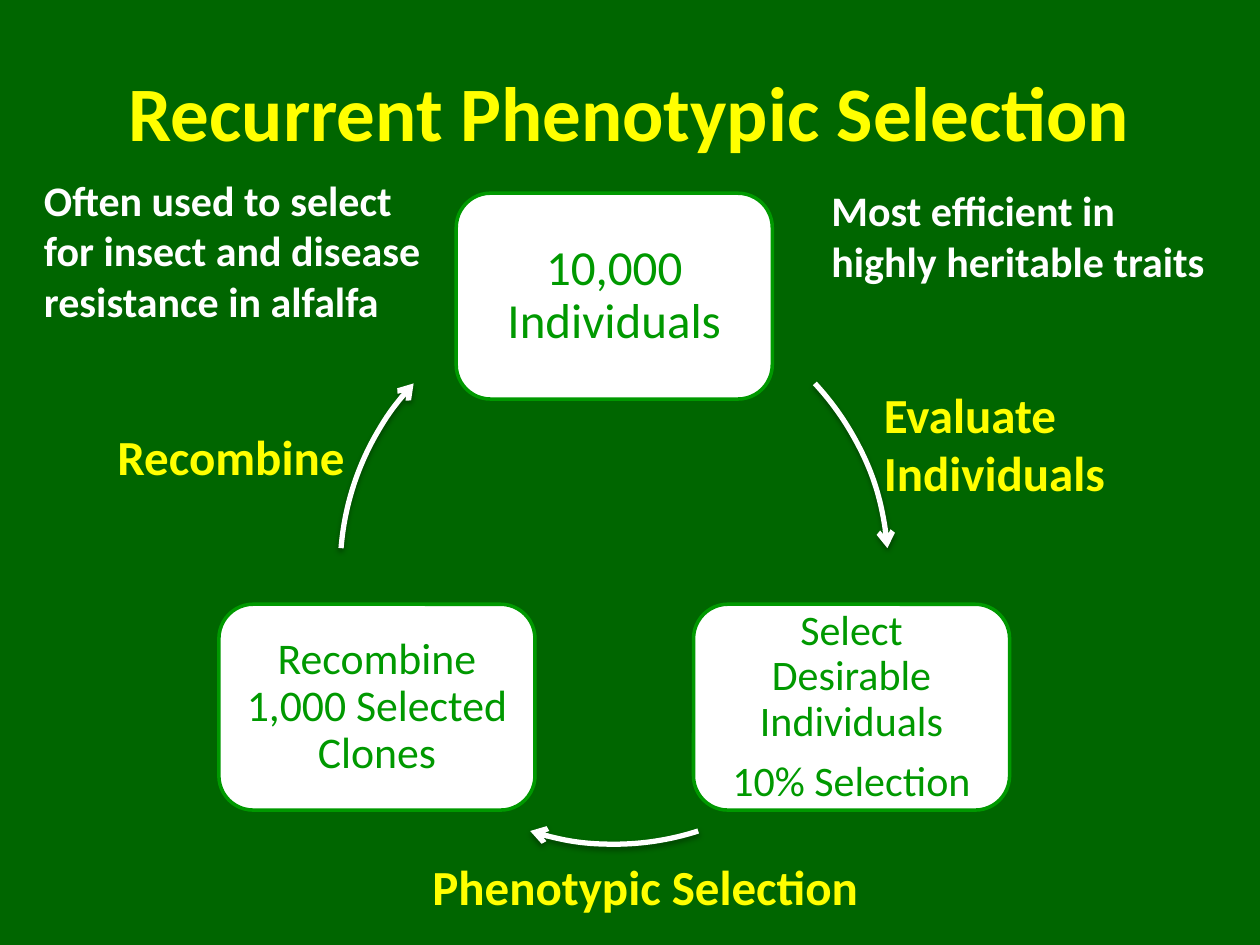
import math
from dataclasses import dataclass

import pptx
import pptx.dml.color
import pptx.enum.shapes
import pptx.enum.text
import pptx.oxml
import pptx.oxml.ns
import pptx.util

COLUMNS, ROWS = 120, 90


@dataclass(frozen=True)
class Theme:
    font: str = "Calibri"
    background: str = "006600"
    accent: str = "FFFF00"
    light: str = "FFFFFF"
    stage: str = "009900"
    title_size: int = 44
    label_size: int = 28
    note_size: int = 24
    border: int = 2
    arrow: int = 3


@dataclass(frozen=True)
class Area:
    column: float
    row: float
    columns: float
    rows: float


@dataclass(frozen=True)
class Cycle:
    column: float = 58.5
    row: float = 54.3
    radius: float = 26.1
    box_columns: float = 30.1
    box_rows: float = 19.6


@dataclass(frozen=True)
class Stage:
    angle: float
    size: int
    paragraphs: tuple[str, ...]
    first_indent: float = 0


@dataclass(frozen=True)
class Label:
    text: str
    area: Area
    size: int
    color: str


THEME = Theme()
CYCLE = Cycle()

STAGES = (
    Stage(-90, 28, ("10,000 Individuals",), -0.33),
    Stage(30, 24, ("Select Desirable Individuals", "10% Selection")),
    Stage(150, 25, ("Recombine 1,000 Selected Clones",)),
)

ARROW_ANGLES = ((317.05, 355.4), (72.15, 107.85), (184.6, 222.95))

LABELS = (
    Label("Recombine", Area(10, 40, 25, 6.9), THEME.label_size, THEME.accent),
    Label("Phenotypic Selection", Area(40, 81, 44, 6.9), THEME.label_size, THEME.accent),
    Label("Evaluate Individuals", Area(83, 36, 31, 12.5), THEME.label_size, THEME.accent),
    Label("Often used to select for insect and disease resistance in alfalfa",
          Area(3, 16, 39, 15.7), THEME.note_size, THEME.light),
    Label("Most efficient in highly heritable traits",
          Area(78, 17, 39, 10.9), THEME.note_size, THEME.light),
)


def rgb(color: str) -> pptx.dml.color.RGBColor:
    return pptx.dml.color.RGBColor.from_string(color)


def place(presentation, area: Area) -> tuple[int, int, int, int]:
    column = presentation.slide_width / COLUMNS
    row = presentation.slide_height / ROWS
    return (round(area.column * column), round(area.row * row),
            round(area.columns * column), round(area.rows * row))


def add_run(paragraph, text: str, size: int, color: str, bold: bool) -> None:
    run = paragraph.add_run()
    run.text = text
    run.font.name = THEME.font
    run.font.size = pptx.util.Pt(size)
    run.font.bold = bold
    run.font.color.rgb = rgb(color)


def set_title(presentation, slide, text: str) -> None:
    title = slide.shapes.title
    title.left, title.top, title.width, title.height = place(presentation, Area(6, 3, 108, 15))
    frame = title.text_frame
    frame.vertical_anchor = pptx.enum.text.MSO_ANCHOR.MIDDLE
    paragraph = frame.paragraphs[0]
    paragraph.alignment = pptx.enum.text.PP_ALIGN.CENTER
    add_run(paragraph, text, THEME.title_size, THEME.accent, True)


def add_stage(presentation, slide, stage: Stage) -> None:
    angle = math.radians(stage.angle)
    area = Area(CYCLE.column + CYCLE.radius * math.cos(angle) - CYCLE.box_columns / 2,
                CYCLE.row + CYCLE.radius * math.sin(angle) - CYCLE.box_rows / 2,
                CYCLE.box_columns, CYCLE.box_rows)
    shape = slide.shapes.add_shape(
        pptx.enum.shapes.MSO_SHAPE.ROUNDED_RECTANGLE, *place(presentation, area))
    shape.shadow.inherit = False
    shape.fill.solid()
    shape.fill.fore_color.rgb = rgb(THEME.light)
    shape.line.color.rgb = rgb(THEME.stage)
    shape.line.width = pptx.util.Pt(THEME.border)
    frame = shape.text_frame
    frame.word_wrap = True
    frame.vertical_anchor = pptx.enum.text.MSO_ANCHOR.MIDDLE
    inset = pptx.util.Inches(0.12)
    frame.margin_left = frame.margin_right = inset
    frame.margin_top = frame.margin_bottom = inset
    for index, text in enumerate(stage.paragraphs):
        paragraph = frame.add_paragraph() if index else frame.paragraphs[0]
        paragraph.alignment = pptx.enum.text.PP_ALIGN.CENTER
        paragraph.line_spacing = 0.9
        paragraph.space_after = pptx.util.Pt(stage.size * 0.35)
        if stage.first_indent:
            properties = paragraph._p.get_or_add_pPr()
            properties.set("marL", "0")
            properties.set("indent", str(pptx.util.Inches(stage.first_indent)))
        add_run(paragraph, text, stage.size, THEME.stage, False)


def add_arrow(presentation, slide, start: float, end: float) -> None:
    area = Area(CYCLE.column - CYCLE.radius, CYCLE.row - CYCLE.radius,
                2 * CYCLE.radius, 2 * CYCLE.radius)
    arc = slide.shapes.add_shape(pptx.enum.shapes.MSO_SHAPE.ARC, *place(presentation, area))
    for index, angle in enumerate((start, end)):
        arc.adjustments[index] = angle * 0.6
    arc.fill.background()
    arc.line.color.rgb = rgb(THEME.light)
    arc.line.width = pptx.util.Pt(THEME.arrow)
    namespace = pptx.oxml.ns.nsdecls("a")
    arc.line._get_or_add_ln().append(pptx.oxml.parse_xml(f'<a:tailEnd {namespace} type="arrow"/>'))
    arc._element.spPr.append(pptx.oxml.parse_xml(
        f'<a:effectLst {namespace}><a:outerShdw blurRad="40000" dist="23000" dir="5400000" '
        'rotWithShape="0"><a:srgbClr val="000000"><a:alpha val="35000"/></a:srgbClr>'
        '</a:outerShdw></a:effectLst>'))


def add_label(presentation, slide, label: Label) -> None:
    frame = slide.shapes.add_textbox(*place(presentation, label.area)).text_frame
    frame.word_wrap = True
    frame.auto_size = pptx.enum.text.MSO_AUTO_SIZE.SHAPE_TO_FIT_TEXT
    add_run(frame.paragraphs[0], label.text, label.size, label.color, True)


def main() -> None:
    presentation = pptx.Presentation()
    presentation.slide_width = pptx.util.Inches(10)
    presentation.slide_height = pptx.util.Inches(7.5)
    slide = presentation.slides.add_slide(presentation.slide_layouts.get_by_name("Title Only"))
    slide.background.fill.solid()
    slide.background.fill.fore_color.rgb = rgb(THEME.background)
    set_title(presentation, slide, "Recurrent Phenotypic Selection")
    for stage, angles in zip(STAGES, ARROW_ANGLES):
        add_stage(presentation, slide, stage)
        add_arrow(presentation, slide, *angles)
    for label in LABELS:
        add_label(presentation, slide, label)
    presentation.save("out.pptx")


if __name__ == "__main__":
    main()
